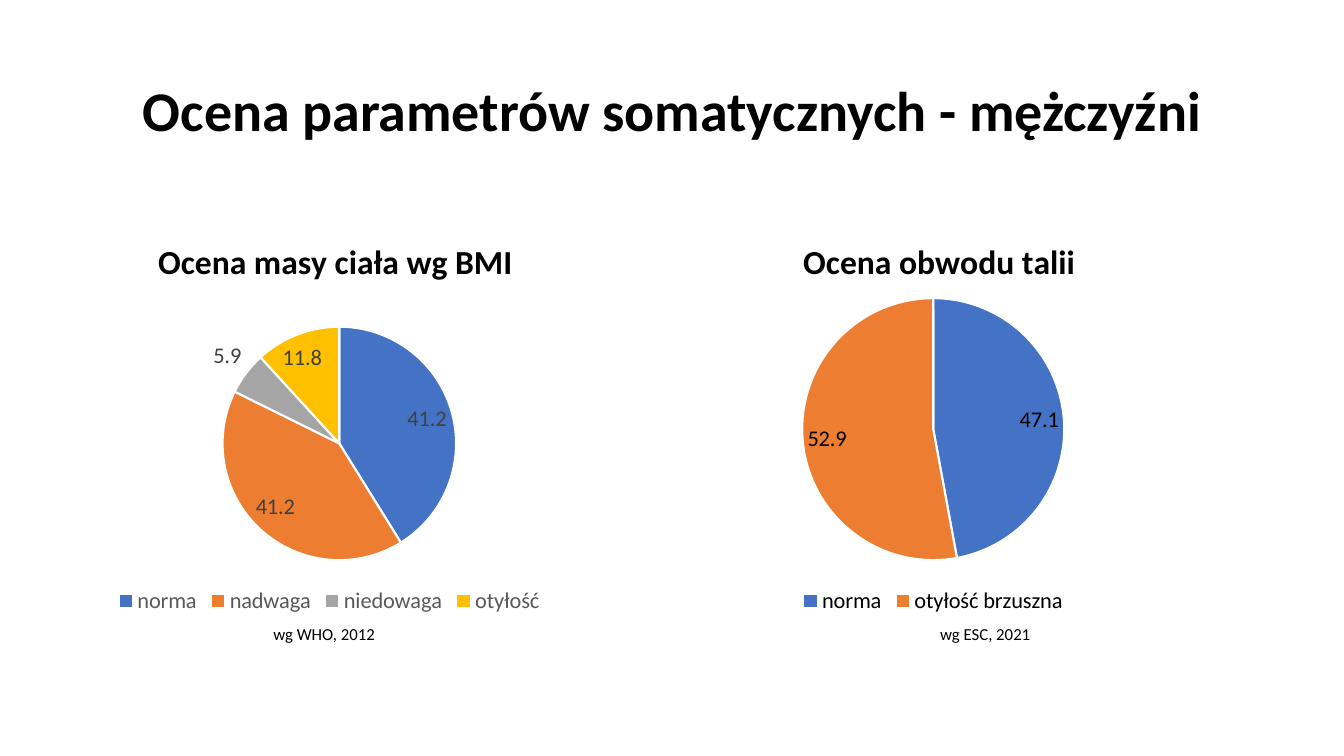
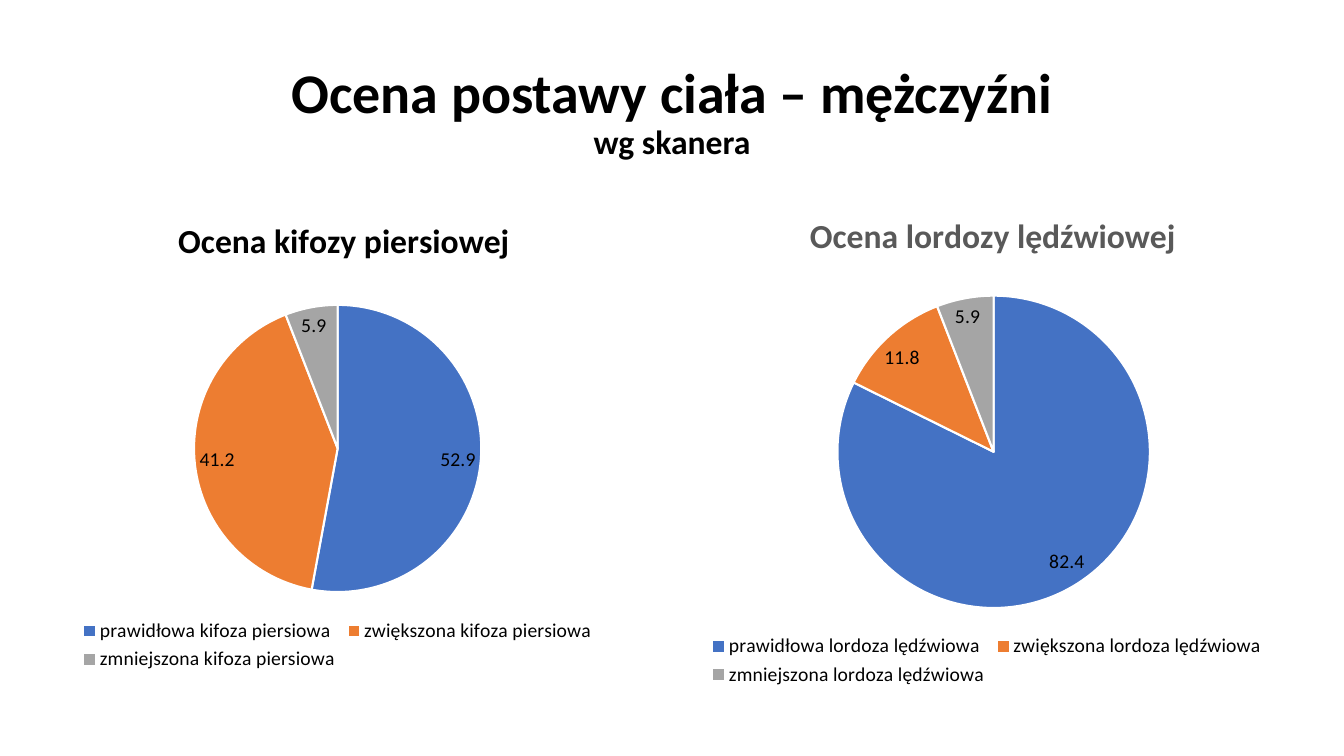
from dataclasses import dataclass
from typing import Any

import pptx
import pptx.chart.chart
import pptx.chart.data
import pptx.dml.color
import pptx.enum.chart
import pptx.enum.text
import pptx.oxml
import pptx.oxml.ns
import pptx.slide
import pptx.util

BLACK = pptx.dml.color.RGBColor(0x00, 0x00, 0x00)
WHITE = pptx.dml.color.RGBColor(0xFF, 0xFF, 0xFF)
GRAY = pptx.dml.color.RGBColor(0x59, 0x59, 0x59)
DARK_GRAY = pptx.dml.color.RGBColor(0x40, 0x40, 0x40)
SLICE_COLORS = (
    pptx.dml.color.RGBColor(0x44, 0x72, 0xC4),
    pptx.dml.color.RGBColor(0xED, 0x7D, 0x31),
    pptx.dml.color.RGBColor(0xA5, 0xA5, 0xA5),
    pptx.dml.color.RGBColor(0xFF, 0xC0, 0x00),
)

FONT = "Calibri"
BLANK_LAYOUT = 6
SLIDE_WIDTH = pptx.util.Inches(13.33)
SLIDE_HEIGHT = pptx.util.Inches(7.5)
COLUMNS, ROWS = 160, 90


@dataclass(frozen=True)
class Area:
    column: float
    row: float
    columns: float
    rows: float

    def place(self) -> tuple[int, int, int, int]:
        return (
            int(self.column * SLIDE_WIDTH / COLUMNS),
            int(self.row * SLIDE_HEIGHT / ROWS),
            int(self.columns * SLIDE_WIDTH / COLUMNS),
            int(self.rows * SLIDE_HEIGHT / ROWS),
        )


@dataclass(frozen=True)
class Line:
    text: str
    size: int
    bold: bool = False


@dataclass(frozen=True)
class Pie:
    area: Area
    heading: str
    heading_at: tuple[float, float]
    center: tuple[float, float]
    diameter: float
    values: dict[str, float]
    size: int
    heading_color: pptx.dml.color.RGBColor = BLACK
    label_color: pptx.dml.color.RGBColor = BLACK
    legend_color: pptx.dml.color.RGBColor = BLACK


@dataclass(frozen=True)
class Caption:
    area: Area
    text: str


@dataclass(frozen=True)
class Page:
    title: tuple[Line, ...]
    pies: tuple[Pie, ...]
    captions: tuple[Caption, ...] = ()


TITLE_AREA = Area(11, 4.8, 138, 17.4)

PAGES = (
    Page(
        title=(Line("Ocena parametrów somatycznych - mężczyźni", 40, True),),
        pies=(
            Pie(
                Area(3.4, 25, 71.6, 48.7), "Ocena masy ciała wg BMI",
                (18.1, 27.7), (40.4, 52.8), 27.8,
                {"norma": 41.2, "nadwaga": 41.2, "niedowaga": 5.9, "otyłość": 11.8},
                16, label_color=DARK_GRAY, legend_color=GRAY,
            ),
            Pie(
                Area(76, 25, 70.2, 48.7), "Ocena obwodu talii",
                (94.9, 27.7), (111.1, 51.1), 31.2,
                {"norma": 47.1, "otyłość brzuszna": 52.9}, 16,
            ),
        ),
        captions=(
            Caption(Area(30.4, 73.7, 16.4, 3.6), "wg WHO, 2012"),
            Caption(Area(109.1, 73.7, 16.4, 3.6), "wg ESC, 2021"),
        ),
    ),
    Page(
        title=(
            Line("Ocena postawy ciała – mężczyźni", 40, True),
            Line("wg skanera", 24, True),
        ),
        pies=(
            Pie(
                Area(6, 22.2, 68.4, 58.2), "Ocena kifozy piersiowej",
                (20.5, 25.2), (40.2, 53.4), 34.2,
                {
                    "prawidłowa kifoza piersiowa": 52.9,
                    "zwiększona kifoza piersiowa": 41.2,
                    "zmniejszona kifoza piersiowa": 5.9,
                },
                14,
            ),
            Pie(
                Area(82.1, 22.2, 70.8, 60), "Ocena lordozy lędźwiowej",
                (95.7, 24.6), (118.3, 53.8), 37.2,
                {
                    "prawidłowa lordoza lędźwiowa": 82.4,
                    "zwiększona lordoza lędźwiowa": 11.8,
                    "zmniejszona lordoza lędźwiowa": 5.9,
                },
                14, heading_color=GRAY,
            ),
        ),
    ),
)


def set_values(target: Any, values: dict[str, Any]) -> None:
    for name, value in values.items():
        setattr(target, name, value)


def set_font(
    font: Any, size: int, color: pptx.dml.color.RGBColor, bold: bool = False
) -> None:
    set_values(font, {"name": FONT, "size": pptx.util.Pt(size), "bold": bold})
    font.color.rgb = color


def add_text(
    page: pptx.slide.Slide, area: Area, lines: tuple[Line, ...], spacing: float = 1.0
) -> None:
    box = page.shapes.add_textbox(*area.place())
    set_values(box.text_frame, {
        "word_wrap": True,
        "vertical_anchor": pptx.enum.text.MSO_ANCHOR.MIDDLE,
    })
    para = box.text_frame.paragraphs[0]
    set_values(para, {
        "alignment": pptx.enum.text.PP_ALIGN.CENTER,
        "line_spacing": spacing,
    })
    for index, line in enumerate(lines):
        if index:
            para.add_line_break()
        span = para.add_run()
        span.text = line.text
        set_font(span.font, line.size, BLACK, line.bold)


def set_layout(parent: Any, position: int, values: dict[str, Any]) -> None:
    for old in parent.findall(pptx.oxml.ns.qn("c:layout")):
        parent.remove(old)
    parts = "".join(f'<c:{name} val="{value}"/>' for name, value in values.items())
    parent.insert(position, pptx.oxml.parse_xml(
        f'<c:layout {pptx.oxml.ns.nsdecls("c")}>'
        f"<c:manualLayout>{parts}</c:manualLayout></c:layout>"
    ))


def place_parts(chart: pptx.chart.chart.Chart, pie: Pie) -> None:
    def share(column: float, row: float) -> dict[str, Any]:
        return {
            "xMode": "edge",
            "yMode": "edge",
            "x": (column - pie.area.column) / pie.area.columns,
            "y": (row - pie.area.row) / pie.area.rows,
        }

    set_layout(chart.chart_title.element, 1, share(*pie.heading_at))
    left, top = (middle - pie.diameter / 2 for middle in pie.center)
    set_layout(
        chart.element.find(".//" + pptx.oxml.ns.qn("c:plotArea")), 0,
        {
            "layoutTarget": "inner",
            **share(left, top),
            "w": pie.diameter / pie.area.columns,
            "h": pie.diameter / pie.area.rows,
        },
    )


def add_pie(page: pptx.slide.Slide, pie: Pie) -> None:
    data = pptx.chart.data.CategoryChartData(number_format="0.0")
    data.categories = list(pie.values)
    data.add_series("Series 1", list(pie.values.values()))
    chart = page.shapes.add_chart(
        pptx.enum.chart.XL_CHART_TYPE.PIE, *pie.area.place(), data
    ).chart
    set_font(chart.font, pie.size, BLACK)

    chart.has_title = True
    frame = chart.chart_title.text_frame
    frame.text = pie.heading
    set_font(frame.paragraphs[0].runs[0].font, 24, pie.heading_color, True)

    chart.has_legend = True
    set_values(chart.legend, {
        "position": pptx.enum.chart.XL_LEGEND_POSITION.BOTTOM,
        "include_in_layout": False,
    })
    set_font(chart.legend.font, pie.size, pie.legend_color)

    plot = chart.plots[0]
    set_values(plot, {"vary_by_categories": True, "has_data_labels": True})
    set_values(plot.data_labels, {
        "show_value": True,
        "show_percentage": False,
        "number_format": "0.0",
        "number_format_is_linked": False,
        "position": pptx.enum.chart.XL_LABEL_POSITION.BEST_FIT,
    })
    set_font(plot.data_labels.font, pie.size, pie.label_color)

    for index, color in enumerate(SLICE_COLORS[:len(pie.values)]):
        look = plot.series[0].points[index].format
        look.fill.solid()
        look.fill.fore_color.rgb = color
        look.line.color.rgb = WHITE
        look.line.width = pptx.util.Pt(1.5)
    place_parts(chart, pie)


def main() -> None:
    deck = pptx.Presentation()
    set_values(deck, {"slide_width": SLIDE_WIDTH, "slide_height": SLIDE_HEIGHT})
    for content in PAGES:
        page = deck.slides.add_slide(deck.slide_layouts[BLANK_LAYOUT])
        add_text(page, TITLE_AREA, content.title, 0.9)
        for caption in content.captions:
            add_text(page, caption.area, (Line(caption.text, 12),))
        for pie in content.pies:
            add_pie(page, pie)
    deck.save("out.pptx")


if __name__ == "__main__":
    main()
